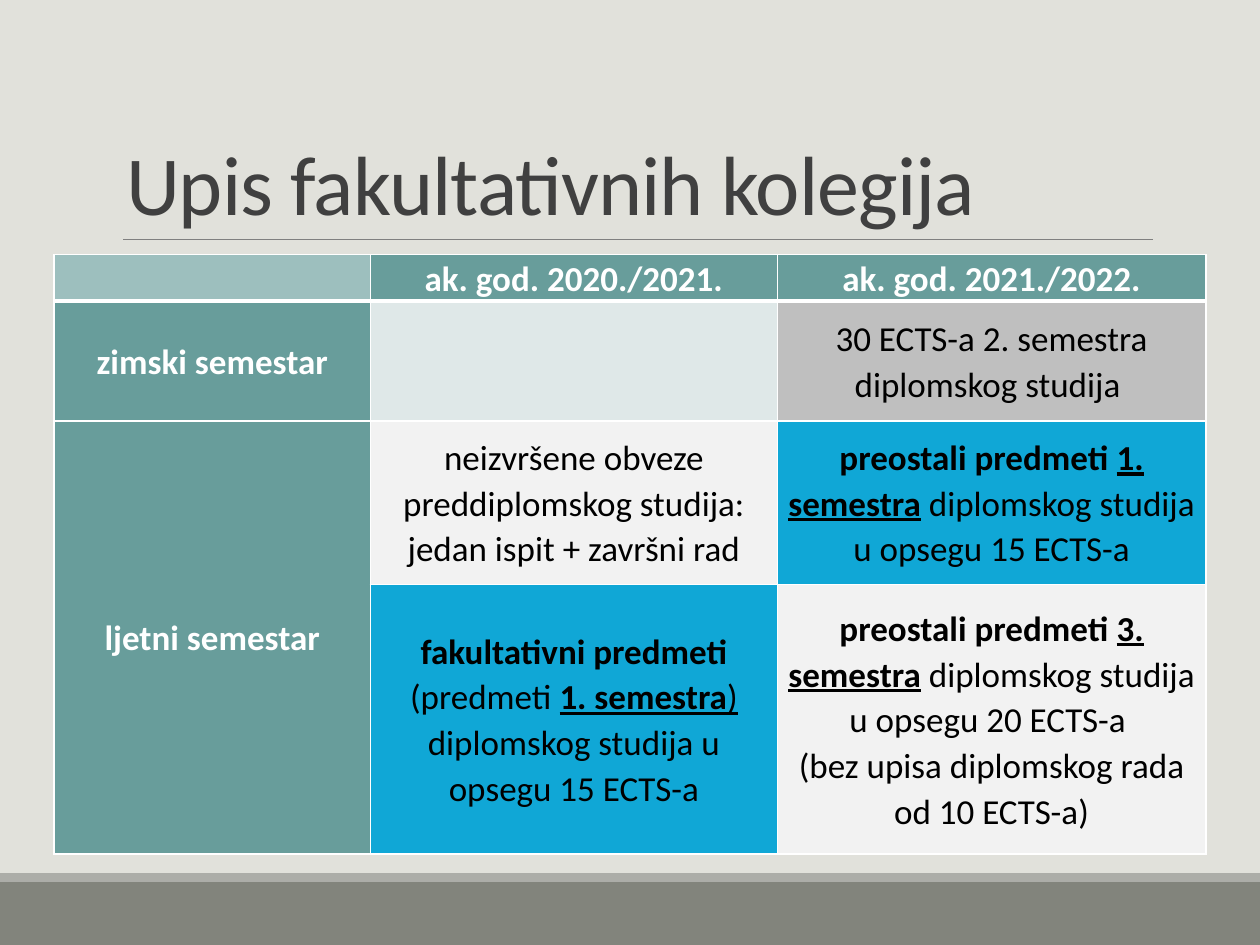
from lxml import etree
from pptx import Presentation
from pptx import util as u
from pptx.dml.color import RGBColor
from pptx.enum import shapes, text
from pptx.oxml.ns import qn


def paint(fill, colour):
    fill.solid()
    fill.fore_color.rgb = RGBColor.from_string(colour)


def add_border(cell, side, position, points):
    line = etree.Element(qn("a:ln" + side), w=str(u.Pt(points)))
    solid = etree.SubElement(line, qn("a:solidFill"))
    etree.SubElement(solid, qn("a:srgbClr"), val="FFFFFF")
    cell._tc.get_or_add_tcPr().insert(position, line)


TEAL, BLUE, PALE, WHITE, BLACK = "689D9B", "10A7D6", "F2F2F2", "FFFFFF", "000000"

presentation = Presentation()
presentation.slide_width, presentation.slide_height = u.Inches(10), u.Inches(7.5)
slide = presentation.slides.add_slide(presentation.slide_layouts[5])
paint(slide.background.fill, "E1E1DB")

for top, height, colour in [(7, 0.5, "82847C"), (6.93, 0.07, "ACADA8")]:
    band = slide.shapes.add_shape(
        shapes.MSO_SHAPE.RECTANGLE, 0, u.Inches(top), presentation.slide_width, u.Inches(height))
    band.shadow.inherit = False
    paint(band.fill, colour)
    band.line.fill.background()

rule = slide.shapes.add_connector(
    shapes.MSO_CONNECTOR.STRAIGHT, u.Inches(0.98), u.Inches(1.9), u.Inches(9.15), u.Inches(1.9))
paint(rule.line.fill, "808080")
rule.line.width = u.Pt(0.5)
etree.SubElement(rule._element.spPr, qn("a:effectLst"))

title = slide.shapes.title
title.left, title.top = u.Inches(0.9), u.Inches(0.31)
title.width, title.height = u.Inches(8.25), u.Inches(1.59)
title.text_frame.text = "Upis fakultativnih kolegija"
title.text_frame.auto_size = text.MSO_AUTO_SIZE.NONE
title.text_frame.vertical_anchor = text.MSO_ANCHOR.BOTTOM
paragraph = title.text_frame.paragraphs[0]
paragraph.alignment = text.PP_ALIGN.LEFT
paragraph.line_spacing = 0.85
paragraph.font.size = u.Pt(48)
paragraph.font.name = "Calibri"
paint(paragraph.font.fill, "404040")
paragraph.runs[0].font._element.set("spc", "-50")

columns = [2.51, 3.23, 3.4]
rows = [0.37, 0.95, 1.3, 2.14]
cells = [
    [("9DBFBE", WHITE, []),
     (TEAL, WHITE, [("ak. god. 2020./2021.", "b")]),
     (TEAL, WHITE, [("ak. god. 2021./2022.", "b")])],
    [(TEAL, WHITE, [("zimski semestar", "b")]),
     ("DFE8E8", BLACK, []),
     ("BFBFBF", BLACK, [("30 ECTS-a 2. semestra diplomskog studija ", "")])],
    [(TEAL, WHITE, [("ljetni semestar", "b")]),
     (PALE, BLACK, [("neizvršene obveze preddiplomskog studija: jedan ispit + završni rad", "")]),
     (BLUE, BLACK, [("preostali predmeti ", "b"), ("1. semestra", "bu"), (" ", "b"),
                    ("diplomskog studija u opsegu 15 ECTS-a", "")])],
    [(TEAL, WHITE, []),
     (BLUE, BLACK, [("fakultativni predmeti ", "b"), ("(predmeti ", ""), ("1. semestra", "bu"),
                    (")", "u"), (" diplomskog studija u opsegu 15 ECTS-a", "")]),
     (PALE, BLACK, [("preostali predmeti ", "b"), ("3. semestra", "bu"), (" ", "b"),
                    ("diplomskog studija u opsegu 20 ECTS-a ", ""), ("\n", ""),
                    ("(bez upisa diplomskog rada od 10 ECTS-a)", "")])],
]

table = slide.shapes.add_table(
    len(rows), len(columns), u.Inches(0.43), u.Inches(2.02),
    u.Inches(sum(columns)), u.Inches(sum(rows))).table
table.horz_banding = False
for column, width in zip(table.columns, columns):
    column.width = u.Inches(width)
for row, height in zip(table.rows, rows):
    row.height = u.Inches(height)

for row_index, row_cells in enumerate(cells):
    for column_index, (fill, colour, pieces) in enumerate(row_cells):
        cell = table.cell(row_index, column_index)
        paint(cell.fill, fill)
        cell.margin_left = cell.margin_right = u.Inches(0.06)
        cell.margin_top = cell.margin_bottom = 0
        cell.vertical_anchor = text.MSO_ANCHOR.MIDDLE if row_index else text.MSO_ANCHOR.BOTTOM
        thickness = {"L": 1, "R": 1, "T": 3 if row_index == 1 else 1, "B": 1 if row_index else 3}
        for position, (side, points) in enumerate(thickness.items()):
            add_border(cell, side, position, points)
        paragraph = cell.text_frame.paragraphs[0]
        paragraph.alignment = text.PP_ALIGN.CENTER
        paragraph.line_spacing = 1.07
        paragraph.space_before = u.Pt(6)
        paragraph.font.size = u.Pt(20)
        paragraph.font.name = "Calibri"
        paint(paragraph.font.fill, colour)
        for wording, style in pieces:
            if wording == "\n":
                paragraph.add_line_break()
                continue
            run = paragraph.add_run()
            run.text = wording
            run.font.size = u.Pt(20)
            run.font.name = "Calibri"
            paint(run.font.fill, colour)
            run.font.bold = "b" in style
            run.font.underline = "u" in style

table.cell(2, 0).merge(table.cell(3, 0))

presentation.save("out.pptx")
